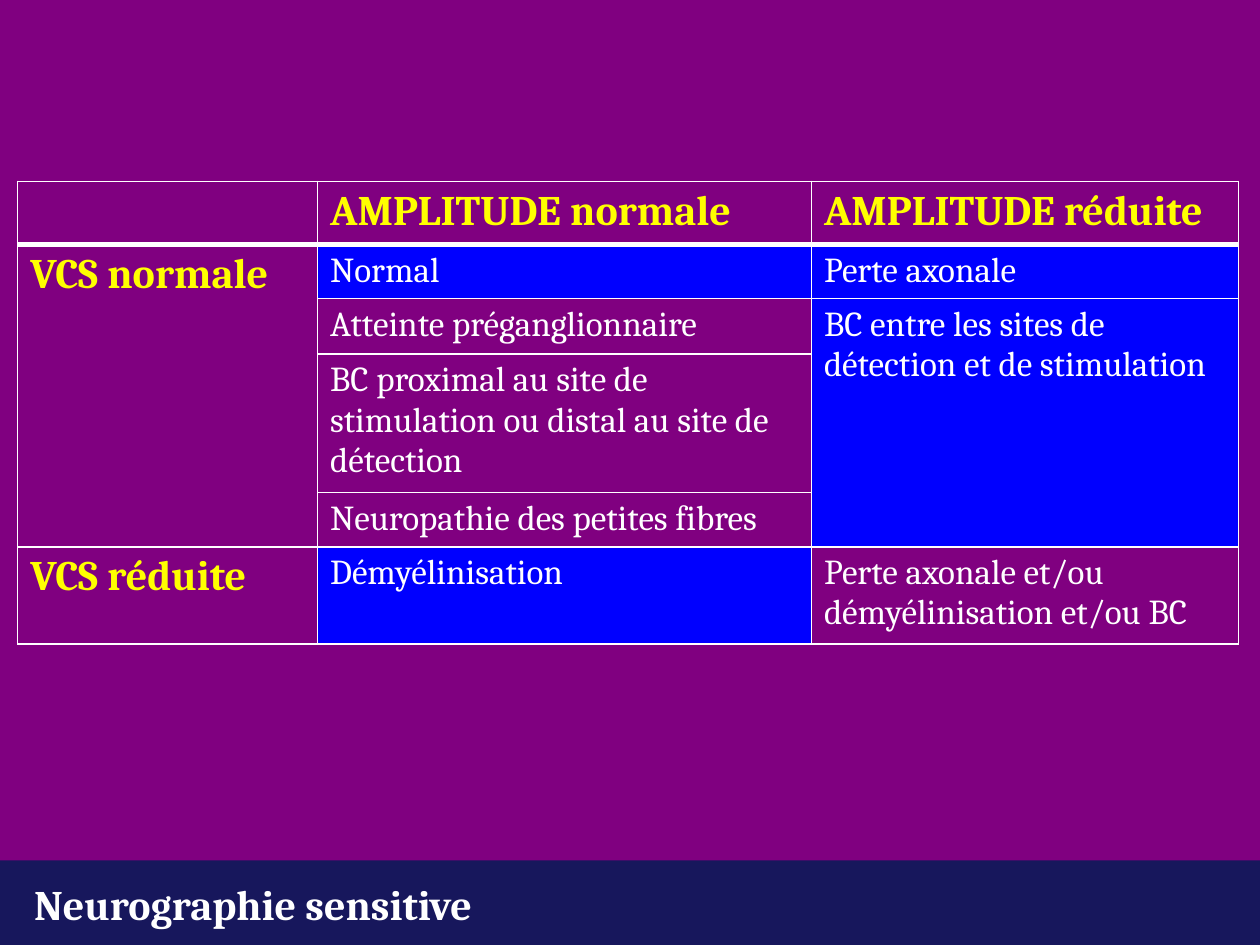
from lxml.etree import SubElement
from pptx import Presentation
from pptx.dml.color import RGBColor
from pptx.enum.shapes import MSO_SHAPE
from pptx.enum.text import MSO_ANCHOR, PP_ALIGN
from pptx.oxml.ns import qn
from pptx.util import Inches, Pt

COLORS = {
    "navy": "17175C",
    "purple": "800080",
    "blue": "0000FF",
    "yellow": "FFFF00",
    "white": "FFFFFF",
}
FONT = "Cambria"

COLUMN_WIDTHS = [2.38, 3.92, 3.39]
ROW_HEIGHTS = [0.5, 0.43, 0.44, 1.1, 0.43, 0.77]
FINDINGS = [
    ["", "AMPLITUDE normale", "AMPLITUDE réduite"],
    ["VCS normale", "Normal", "Perte axonale"],
    ["", "Atteinte préganglionnaire",
     "BC entre les sites de détection et de stimulation"],
    ["", "BC proximal au site de stimulation ou distal au site de détection", ""],
    ["", "Neuropathie des petites fibres", ""],
    ["VCS réduite", "Démyélinisation",
     "Perte axonale et/ou démyélinisation et/ou BC"],
]
MERGES = [((1, 0), (4, 0)), ((2, 2), (4, 2))]
BLUE_CELLS = {(1, 1), (1, 2), (2, 2), (5, 1)}


def color(name):
    return RGBColor.from_string(COLORS[name])


def write_text(frame, text, size=20, ink="white", bold=False):
    paragraph = frame.paragraphs[0]
    paragraph.alignment = PP_ALIGN.LEFT
    run = paragraph.add_run()
    run.text = text
    run.font.name = FONT
    run.font.size = Pt(size)
    run.font.bold = bold
    run.font.color.rgb = color(ink)


def add_panel(slide, left, top, width, height, fill):
    panel = slide.shapes.add_shape(
        MSO_SHAPE.RECTANGLE,
        Inches(left), Inches(top), Inches(width), Inches(height))
    panel.shadow.inherit = False
    panel.fill.solid()
    panel.fill.fore_color.rgb = color(fill)
    panel.line.fill.background()


def place_title(slide, text):
    title = slide.shapes.title
    title.left, title.top = Inches(0.17), Inches(6.92)
    title.width, title.height = Inches(4.92), Inches(0.5)
    title.text_frame.vertical_anchor = MSO_ANCHOR.MIDDLE
    write_text(title.text_frame, text, size=24, bold=True)


def set_borders(cell, **widths):
    properties = cell._tc.get_or_add_tcPr()
    for side in "LRTB":
        line = SubElement(properties, qn(f"a:ln{side}"),
                          w=str(Pt(widths.get(side, 1))))
        fill = SubElement(line, qn("a:solidFill"))
        SubElement(fill, qn("a:srgbClr"), val=COLORS["white"])


def format_cell(cell, row, column):
    # The heavy rule lies between the header and the first body row
    set_borders(cell, T=3 if row == 1 else 1, B=3 if row == 0 else 1)
    if (row, column) in BLUE_CELLS:
        cell.fill.solid()
        cell.fill.fore_color.rgb = color("blue")
    else:
        cell.fill.background()


def add_findings_table(slide):
    table = slide.shapes.add_table(
        len(ROW_HEIGHTS), len(COLUMN_WIDTHS), Inches(0.14), Inches(1.44),
        Inches(sum(COLUMN_WIDTHS)), Inches(sum(ROW_HEIGHTS))).table
    table.first_row = table.horz_banding = False
    for column, width in zip(table.columns, COLUMN_WIDTHS):
        column.width = Inches(width)
    for row, height in zip(table.rows, ROW_HEIGHTS):
        row.height = Inches(height)

    for r, texts in enumerate(FINDINGS):
        for c, text in enumerate(texts):
            cell = table.cell(r, c)
            format_cell(cell, r, c)
            if not text:
                continue
            if r == 0 or c == 0:
                write_text(cell.text_frame, text, size=24, ink="yellow", bold=True)
            else:
                write_text(cell.text_frame, text)

    for first, last in MERGES:
        table.cell(*first).merge(table.cell(*last))


def main():
    presentation = Presentation()
    presentation.slide_width = Inches(10)
    presentation.slide_height = Inches(7.5)
    slide = presentation.slides.add_slide(presentation.slide_layouts[5])

    # Navy footer band below a purple content area
    slide.background.fill.solid()
    slide.background.fill.fore_color.rgb = color("navy")
    add_panel(slide, 0, 0, 10, 6.83, "purple")

    place_title(slide, "Neurographie sensitive")
    add_findings_table(slide)
    presentation.save("out.pptx")


if __name__ == "__main__":
    main()
